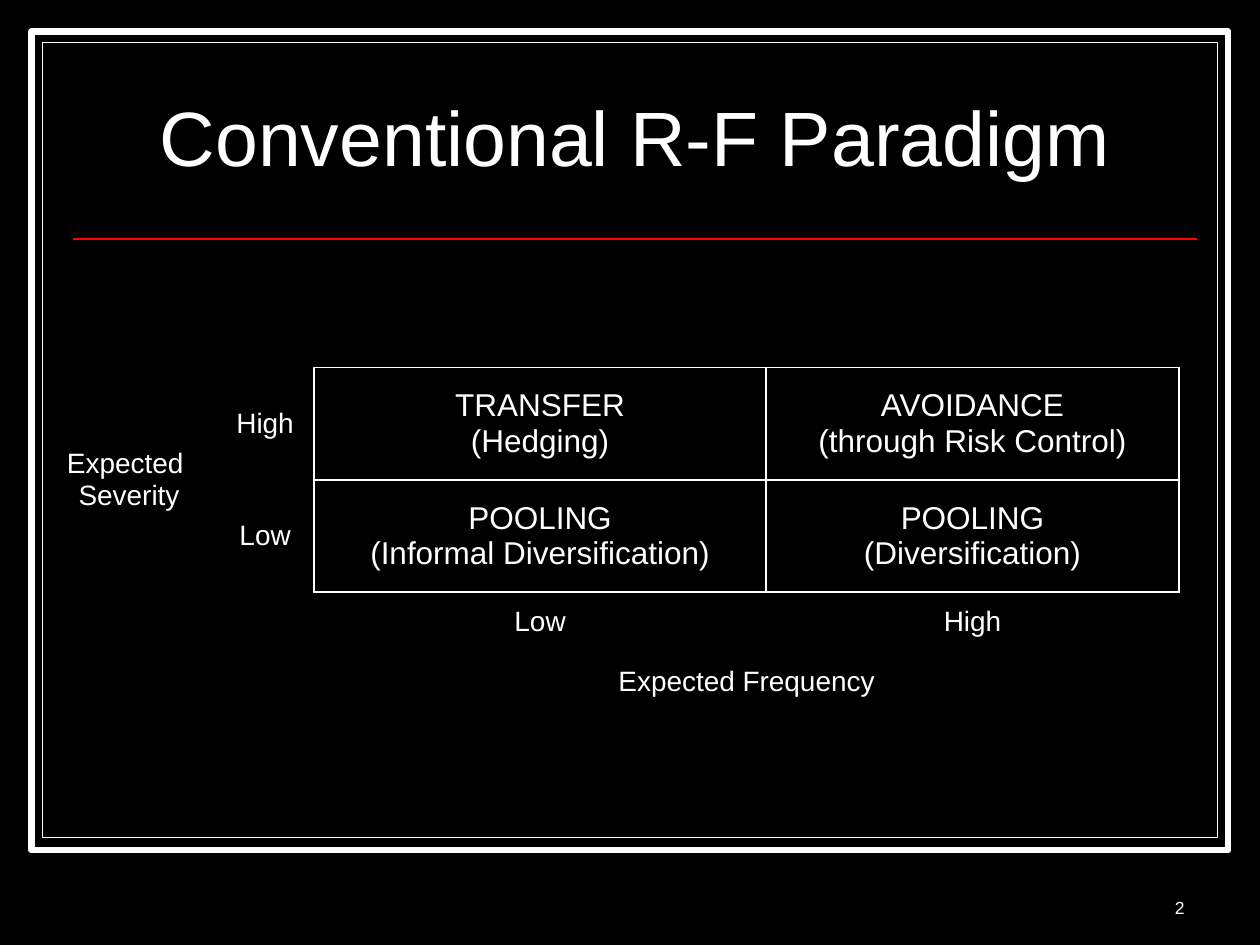
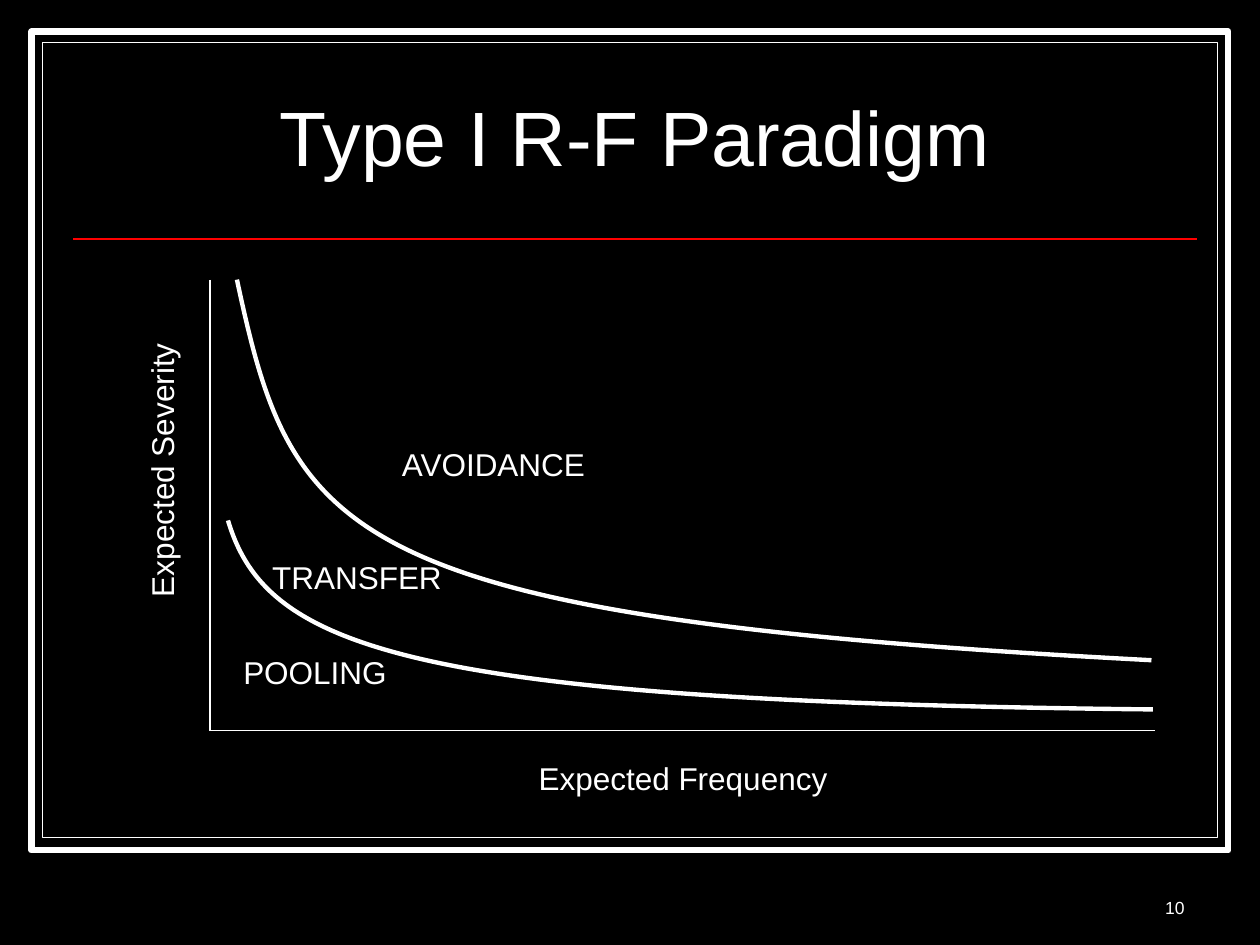
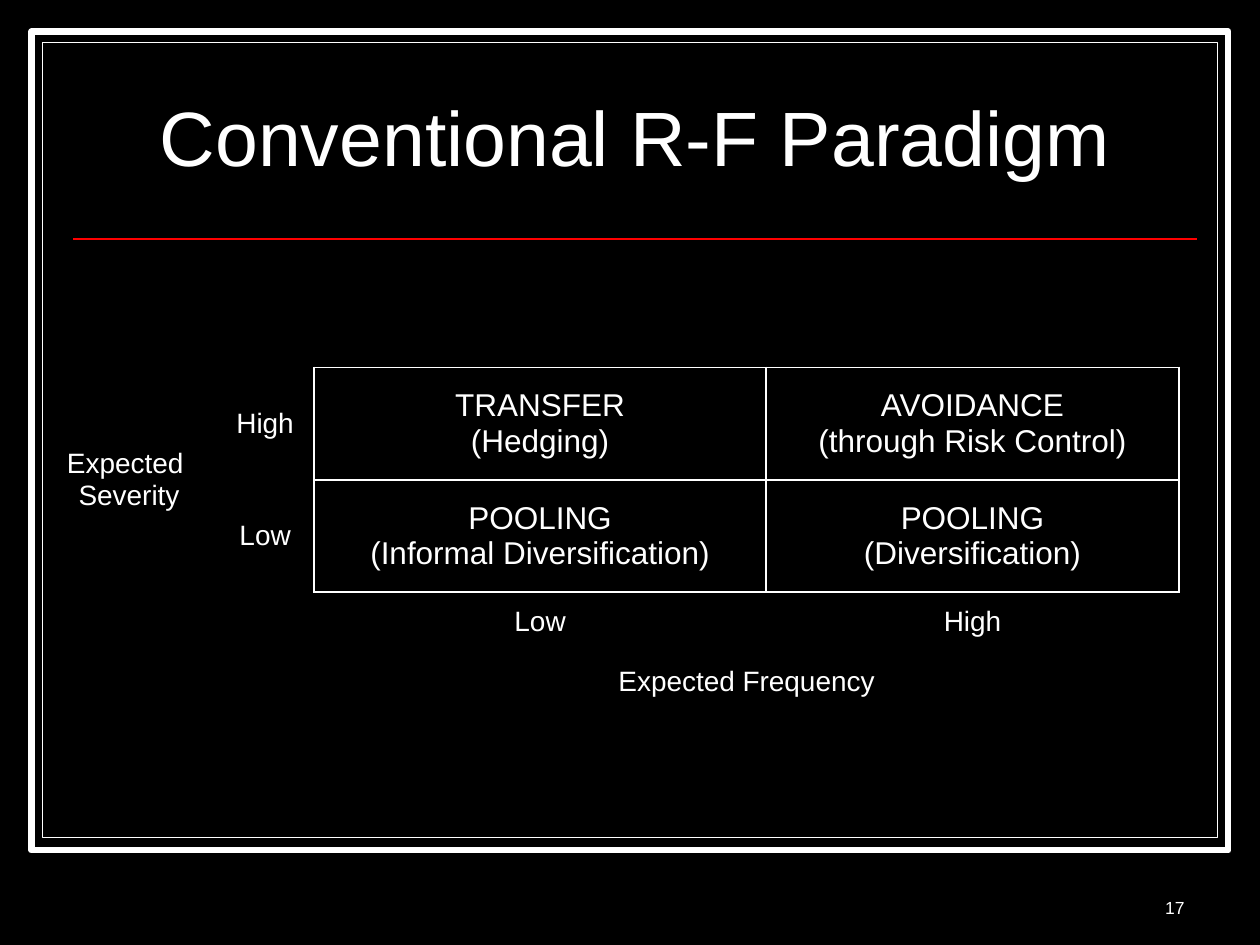
"""Build three slides on the conventional and Type I R-F paradigms."""
from lxml.etree import SubElement
from pptx import Presentation
from pptx.dml.color import RGBColor
from pptx.enum.shapes import MSO_CONNECTOR, MSO_SHAPE
from pptx.enum.text import MSO_ANCHOR, MSO_AUTO_SIZE, PP_ALIGN
from pptx.oxml.ns import qn
from pptx.util import Pt

BLACK = "000000"
WHITE = "FFFFFF"
RED = "FF0000"
FONT = "Arial"
NO_GRID_STYLE = "{2D5ABB26-0587-4C30-8999-92F81FD0307C}"
TITLE_BOX = (42, 37.5, 642, 90)
NUMBER_BOX = (534, 492, 150, 36)
COLUMN_WIDTHS = (99.5, 56, 258.25, 236)
ROW_HEIGHTS = (62, 62, 34, 34)
STRATEGIES = {
    (0, 2): "TRANSFER\n(Hedging)",
    (0, 3): "AVOIDANCE\n(through Risk Control)",
    (1, 2): "POOLING\n(Informal Diversification)",
    (1, 3): "POOLING\n(Diversification)",
}
AXIS_LABELS = {
    (0, 0): "Expected \nSeverity",
    (0, 1): "High",
    (1, 1): "Low",
    (2, 2): "Low",
    (2, 3): "High",
    (3, 2): "Expected Frequency",
}
CURVES = (
    ((135.4, 159.8), (167, 306.7), (190.8, 352.8), (658, 377.3)),
    ((130.3, 297.4), (152, 370), (231, 401), (658.8, 405.4)),
)
REGIONS = (("AVOIDANCE", 216, 250.5), ("TRANSFER", 138, 315.5), ("POOLING", 114, 369.5))


def color(value):
    """Return the colour for a hex string."""
    return RGBColor.from_string(value)


def points(*lengths):
    """Return the given lengths in points."""
    return [Pt(length) for length in lengths]


def place(shape, box):
    """Move and size a shape to a box of left, top, width and height."""
    shape.left, shape.top, shape.width, shape.height = points(*box)


def write_text(text_frame, text, size=18, align=PP_ALIGN.CENTER, line_spacing=None):
    """Fill a text frame with one formatted paragraph per line of text."""
    text_frame.text = text
    for paragraph in text_frame.paragraphs:
        paragraph.alignment = align
        paragraph.line_spacing = line_spacing
        for run in paragraph.runs:
            run.font.name = FONT
            run.font.size = Pt(size)
            run.font.color.rgb = color(WHITE)


def add_text(slide, text, box, anchor=MSO_ANCHOR.TOP, wrap=True, vertical=False, **text_format):
    """Add a text box, optionally reading upwards."""
    shape = slide.shapes.add_textbox(*points(*box))
    shape.text_frame.word_wrap = wrap
    shape.text_frame.vertical_anchor = anchor
    write_text(shape.text_frame, text, **text_format)
    if vertical:
        next(shape.element.iter(qn("a:bodyPr"))).set("vert", "vert270")


def add_frame(slide, box, line_width):
    """Add a black rectangle with a white outline."""
    shape = slide.shapes.add_shape(MSO_SHAPE.RECTANGLE, *points(*box))
    shape.shadow.inherit = False
    shape.fill.solid()
    shape.fill.fore_color.rgb = color(BLACK)
    shape.line.color.rgb = color(WHITE)
    shape.line.width = Pt(line_width)
    return shape


def add_line(slide, start, end, line_color=WHITE, line_width=0.75):
    """Add a straight line without a shadow."""
    line = slide.shapes.add_connector(MSO_CONNECTOR.STRAIGHT, *points(*start, *end))
    line.line.color.rgb = color(line_color)
    line.line.width = Pt(line_width)
    SubElement(line.element.spPr, qn("a:effectLst"))
    return line


def add_curve(slide, control_points):
    """Add a white cubic curve through four control points."""
    start, *others = [points(*point) for point in control_points]
    builder = slide.shapes.build_freeform(*start)
    builder.add_line_segments(others, close=False)
    shape = builder.convert_to_shape()
    shape.shadow.inherit = False
    shape.fill.background()
    shape.line.color.rgb = color(WHITE)
    shape.line.width = Pt(2.5)
    outline = next(shape.element.iter(qn("a:path")))
    segments = outline.findall(qn("a:lnTo"))
    cubic = SubElement(outline, qn("a:cubicBezTo"))
    for segment in segments:
        cubic.append(segment[0])
        outline.remove(segment)


def draw_borders(cell, sides):
    """Draw white one-point borders on the given sides of a cell."""
    properties = cell._tc.get_or_add_tcPr()
    for side in sides:
        border = SubElement(properties, qn(f"a:ln{side}"), w=str(Pt(1)))
        fill = SubElement(border, qn("a:solidFill"))
        SubElement(fill, qn("a:srgbClr"), val=WHITE)


def add_matrix(slide):
    """Add the table of strategies by severity and frequency."""
    box = (24, 210, sum(COLUMN_WIDTHS), sum(ROW_HEIGHTS))
    frame = slide.shapes.add_table(len(ROW_HEIGHTS), len(COLUMN_WIDTHS), *points(*box))
    next(frame.element.iter(qn("a:tableStyleId"))).text = NO_GRID_STYLE
    table = frame.table
    table.first_row = table.horz_banding = False
    for column, width in zip(table.columns, COLUMN_WIDTHS):
        column.width = Pt(width)
    for row, height in zip(table.rows, ROW_HEIGHTS):
        row.height = Pt(height)
    table.cell(0, 0).merge(table.cell(1, 0))
    table.cell(3, 2).merge(table.cell(3, 3))
    for cell in table.iter_cells():
        cell.fill.background()
        cell.vertical_anchor = MSO_ANCHOR.MIDDLE
    for position, text in AXIS_LABELS.items():
        write_text(table.cell(*position).text_frame, text, size=16)
    for position, text in STRATEGIES.items():
        cell = table.cell(*position)
        cell.fill.background()
        cell.margin_top = cell.margin_bottom = Pt(10.5)
        write_text(cell.text_frame, text)
        properties = cell._tc.get_or_add_tcPr()
        properties.remove(properties.find(qn("a:noFill")))
        draw_borders(cell, "LRTB")
        cell.fill.background()


def add_region_diagram(slide):
    """Add the axes, the two curves and the names of the regions."""
    origin = (120, 417.5)
    add_line(slide, (120, 160), origin)
    add_line(slide, origin, (660, 417.5))
    for control_points in CURVES:
        add_curve(slide, control_points)
    add_text(slide, "Expected Severity", (78, 192, 36, 153.5), wrap=False, vertical=True)
    for name, left, top in REGIONS:
        add_text(slide, name, (left, top, 132, 29))
    add_text(slide, "Expected Frequency", (299.5, 430, 181.5, 29), wrap=False)


def style_layout(layout, slide):
    """Give the layout its background, title place, frames and red rule."""
    layout.background.fill.solid()
    layout.background.fill.fore_color.rgb = color(BLACK)
    place(layout.placeholders[0], TITLE_BOX)
    decorations = (
        add_frame(slide, (18, 18, 684, 468), 3.5),
        add_frame(slide, (24.25, 24.25, 671.5, 454.5), 0.75),
        add_line(slide, (42, 136.5), (684, 136.5), RED, 1),
    )
    for index, shape in enumerate(decorations, start=2):
        layout.shapes.element.insert(index, shape.element)


def add_slide(presentation, layout, title, number):
    """Add a slide with its title and slide number."""
    slide = presentation.slides.add_slide(layout)
    text_frame = slide.shapes.title.text_frame
    text_frame.auto_size = MSO_AUTO_SIZE.NONE
    text_frame.vertical_anchor = MSO_ANCHOR.MIDDLE
    write_text(text_frame, title, size=44, line_spacing=0.8)
    add_text(slide, number, NUMBER_BOX, anchor=MSO_ANCHOR.BOTTOM, size=10, align=PP_ALIGN.RIGHT)
    return slide


def main():
    """Build and save the presentation."""
    presentation = Presentation()
    presentation.slide_width, presentation.slide_height = points(720, 540)
    layout = presentation.slide_layouts.get_by_name("Title Only")
    contents = (
        ("Conventional R-F Paradigm", "2", add_matrix),
        ("Type I R-F Paradigm", "10", add_region_diagram),
        ("Conventional R-F Paradigm", "17", add_matrix),
    )
    for title, number, add_content in contents:
        slide = add_slide(presentation, layout, title, number)
        add_content(slide)
    style_layout(layout, presentation.slides[0])
    presentation.save("out.pptx")


if __name__ == "__main__":
    main()
